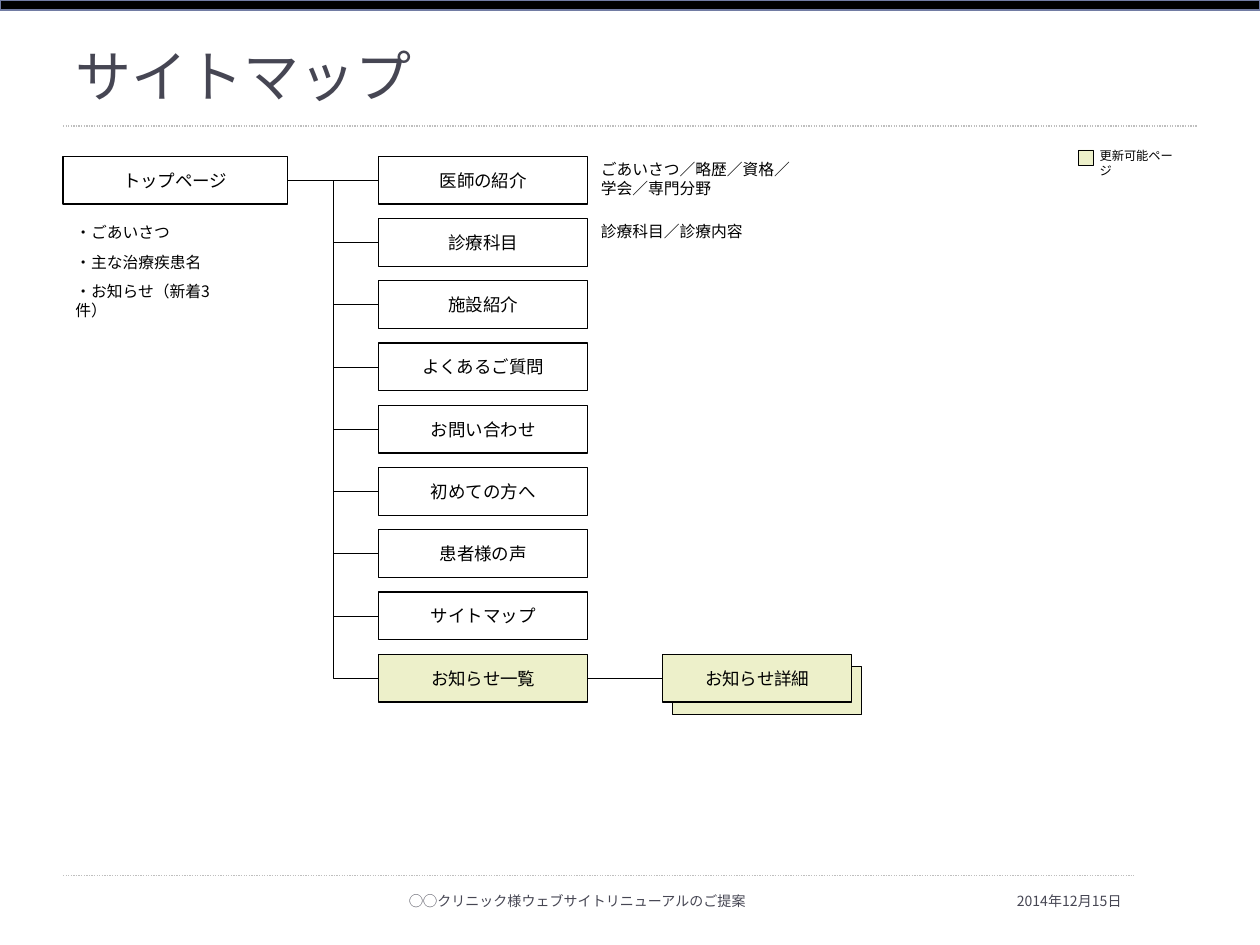
from dataclasses import dataclass
from typing import Optional

from lxml.etree import SubElement
from pptx import Presentation
from pptx.dml.color import RGBColor
from pptx.enum.dml import MSO_LINE_DASH_STYLE as Dash
from pptx.enum.shapes import MSO_CONNECTOR as Link, MSO_SHAPE as Preset
from pptx.enum.text import MSO_ANCHOR as Anchor, PP_ALIGN as Align
from pptx.oxml.ns import qn
from pptx.util import Emu, Inches, Pt


@dataclass(frozen=True)
class Theme:
    ink: str = "000000"
    paper: str = "FFFFFF"
    heading: str = "464653"
    updatable: str = "EDF0CA"
    rule: str = "BFBFBF"
    bar_edge: str = "727CA3"
    font: str = "Noto Sans CJK JP"
    legend_font: str = "Calibri"
    title_size: float = 32
    page_size: float = 10
    note_size: float = 9
    footer_size: float = 8
    legend_size: float = 7
    edge: float = 0.75
    hairline: float = 0.25


@dataclass(frozen=True)
class Area:
    """Place on a grid of 100 columns by 75 rows."""
    col: float
    row: float
    cols: float
    rows: float


@dataclass(frozen=True)
class Style:
    size: float
    color: str
    font: str
    align: Align = Align.LEFT
    anchor: Anchor = Anchor.TOP
    space_after: float = 0


@dataclass(frozen=True)
class Page:
    name: str
    updatable: bool = False


@dataclass(frozen=True)
class Note:
    lines: tuple
    area: Area
    style: Style


THEME = Theme()
PAGE_TEXT = Style(THEME.page_size, THEME.ink, THEME.font, Align.CENTER, Anchor.MIDDLE)
NOTE_TEXT = Style(THEME.note_size, THEME.ink, THEME.font)
LIST_TEXT = Style(THEME.note_size, THEME.ink, THEME.font, space_after=6)
LEGEND_TEXT = Style(THEME.legend_size, THEME.ink, THEME.legend_font)
TITLE_TEXT = Style(THEME.title_size, THEME.heading, THEME.font, anchor=Anchor.BOTTOM)
FOOTER_TEXT = Style(THEME.footer_size, THEME.heading, THEME.font, Align.CENTER, Anchor.MIDDLE)
DATE_TEXT = Style(THEME.footer_size, THEME.heading, THEME.font, Align.RIGHT, Anchor.MIDDLE)

# Page tree: one row per page, at an equal pitch
FIRST_ROW, ROW_PITCH, PAGE_ROWS = 12.4, 4.94, 3.8
PAGES = (
    Page("医師の紹介"), Page("診療科目"), Page("施設紹介"),
    Page("よくあるご質問"), Page("お問い合わせ"), Page("初めての方へ"),
    Page("患者様の声"), Page("サイトマップ"), Page("お知らせ一覧", updatable=True),
)

NOTES = (
    Note(("サイトマップ",), Area(5, 3.3, 90, 5.8), TITLE_TEXT),
    Note(("・ごあいさつ", "・主な治療疾患名", "・お知らせ（新着3件）"),
         Area(5, 17.2, 15, 7), LIST_TEXT),
    Note(("ごあいさつ／略歴／資格／", "学会／専門分野"), Area(46.7, 12.2, 26.4, 4), NOTE_TEXT),
    Note(("診療科目／診療内容",), Area(46.7, 17.1, 26.4, 2.5), NOTE_TEXT),
    Note(("更新可能ページ",), Area(86.3, 11.3, 8.7, 2.2), LEGEND_TEXT),
    Note(("◯◯クリニック様ウェブサイトリニューアルのご提案",),
         Area(26.7, 69.5, 38.3, 4), FOOTER_TEXT),
    Note(("2014年12月15日",), Area(65, 69.5, 25, 4), DATE_TEXT),
)

deck = Presentation()
deck.slide_width, deck.slide_height = Inches(10), Inches(7.5)
slide = deck.slides.add_slide(deck.slide_layouts[6])


def across(cols: float) -> Emu:
    return Emu(round(deck.slide_width * cols / 100))


def down(rows: float) -> Emu:
    return Emu(round(deck.slide_height * rows / 75))


def placed(area: Area) -> tuple:
    return across(area.col), down(area.row), across(area.cols), down(area.rows)


def write(frame, lines: tuple, style: Style) -> None:
    frame.word_wrap = True
    frame.vertical_anchor = style.anchor
    for index, line in enumerate(lines):
        paragraph = frame.add_paragraph() if index else frame.paragraphs[0]
        paragraph.alignment = style.align
        paragraph.space_after = Pt(style.space_after)
        run = paragraph.add_run()
        run.text = line
        run.font.size = Pt(style.size)
        run.font.color.rgb = RGBColor.from_string(style.color)
        run.font.name = style.font
        SubElement(run.font._element, qn("a:ea"), typeface=style.font)


def draw_box(area: Area, fill: str, label: Optional[str] = None,
             line: str = THEME.ink, width: float = THEME.edge):
    box = slide.shapes.add_shape(Preset.RECTANGLE, *placed(area))
    box.shadow.inherit = False
    box.fill.solid()
    box.fill.fore_color.rgb = RGBColor.from_string(fill)
    box.line.color.rgb = RGBColor.from_string(line)
    box.line.width = Pt(width)
    if label:
        write(box.text_frame, (label,), PAGE_TEXT)
    return box


def style_line(connector, color: str, width: float) -> None:
    SubElement(connector._element.spPr, qn("a:effectLst"))
    connector.line.color.rgb = RGBColor.from_string(color)
    connector.line.width = Pt(width)


def draw_rule(row: float, end_col: float) -> None:
    rule = slide.shapes.add_connector(
        Link.STRAIGHT, across(5), down(row), across(end_col), down(row))
    style_line(rule, THEME.rule, THEME.edge)
    rule.line.dash_style = Dash.ROUND_DOT


def link(parent, child) -> None:
    """Join the right side of the parent to the left side of the child."""
    branch = slide.shapes.add_connector(Link.ELBOW, 0, 0, 0, 0)
    branch.begin_connect(parent, 3)
    branch.end_connect(child, 1)
    style_line(branch, THEME.ink, THEME.hairline)


# Top bar and dotted rules
draw_rule(69.5, 90)
draw_rule(10, 95)
draw_box(Area(0, 0, 100, 0.8), THEME.ink, line=THEME.bar_edge)

# Top page and its child pages
top_page = draw_box(Area(5, FIRST_ROW, 17.8, PAGE_ROWS), THEME.paper, "トップページ")
for index, page in enumerate(PAGES):
    page_row = FIRST_ROW + index * ROW_PITCH
    fill = THEME.updatable if page.updatable else THEME.paper
    page_box = draw_box(Area(30.05, page_row, 16.6, PAGE_ROWS), fill, page.name)
    link(top_page, page_box)

# News detail pages, stacked beside the news list
draw_box(Area(53.4, page_row + 1, 15, PAGE_ROWS), THEME.updatable)
news_detail = draw_box(Area(52.6, page_row, 15, PAGE_ROWS), THEME.updatable, "お知らせ詳細")
link(page_box, news_detail)

# Legend swatch, title, notes and footer
draw_box(Area(85.6, 11.9, 1.2, 1.2), THEME.updatable, width=THEME.hairline)
for note in NOTES:
    write(slide.shapes.add_textbox(*placed(note.area)).text_frame, note.lines, note.style)

deck.save("out.pptx")
